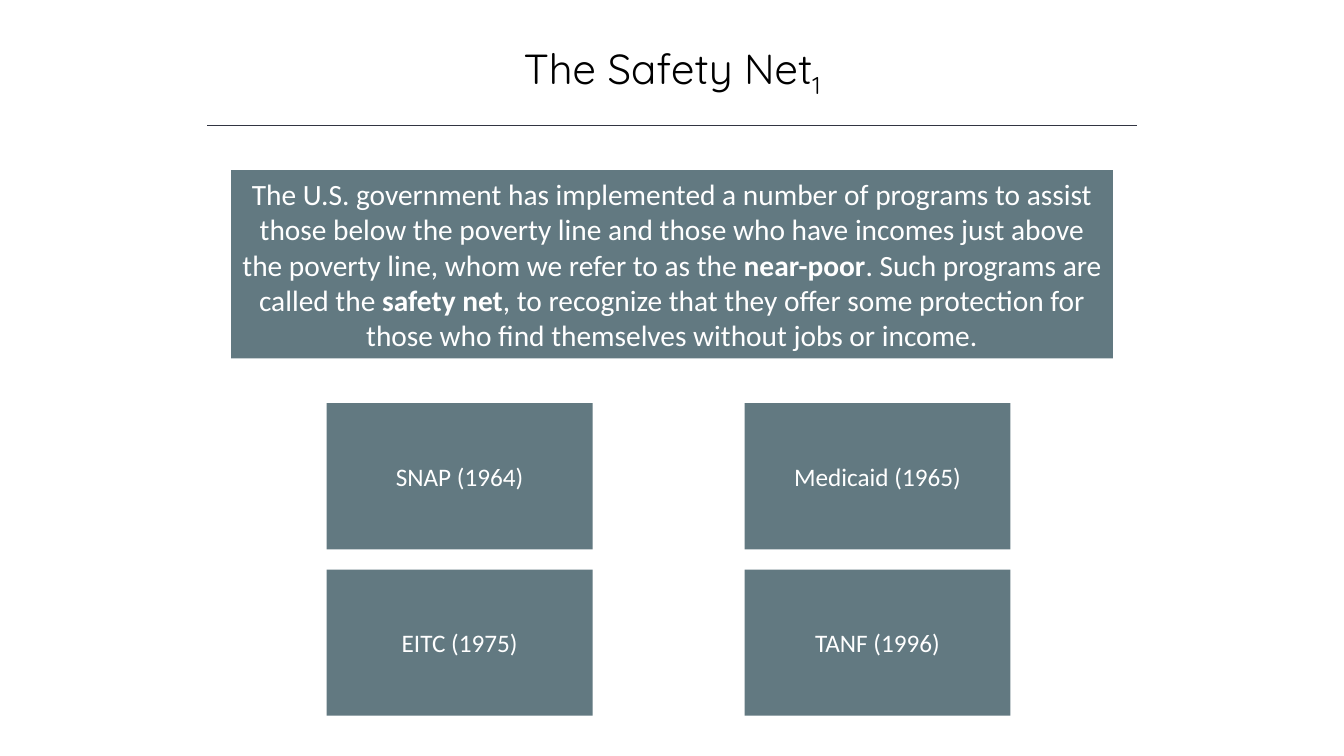
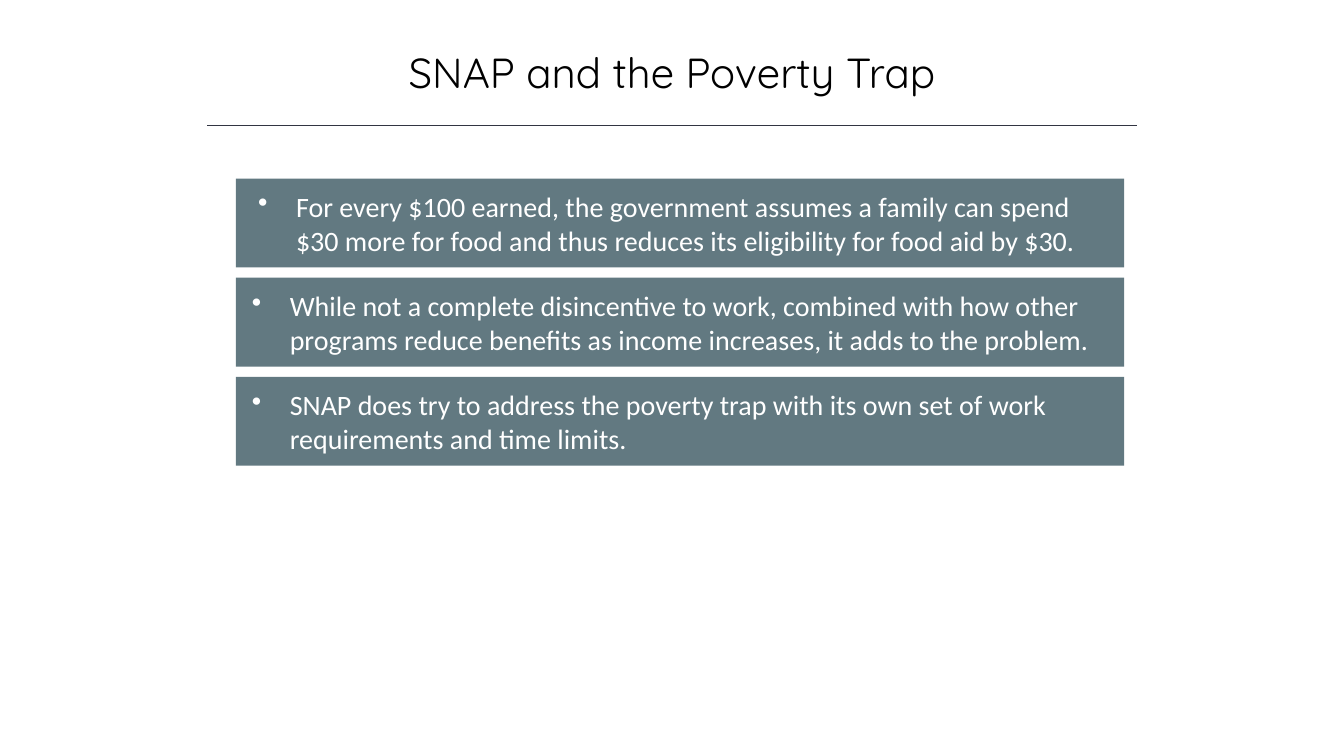
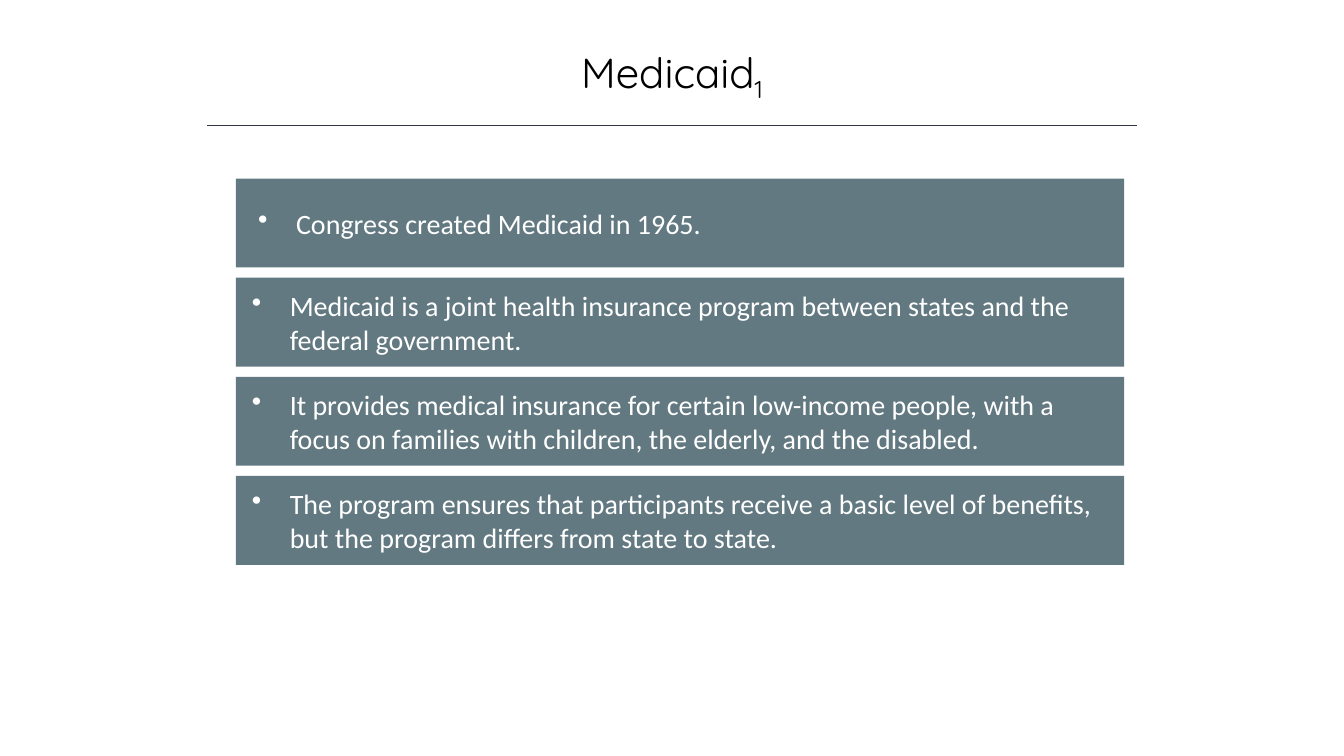
"""Build three slides on the safety net, SNAP and Medicaid."""
from pptx import Presentation
from pptx.dml.color import RGBColor
from pptx.enum.shapes import MSO_CONNECTOR, MSO_SHAPE
from pptx.enum.text import MSO_ANCHOR, MSO_AUTO_SIZE, PP_ALIGN
from pptx.oxml.ns import qn
from pptx.util import Pt
from lxml.etree import SubElement

SLATE, INK, RULE, WHITE = "627981", "000000", "323542", "FFFFFF"


def hue(code):
    return RGBColor.from_string(code)


def box(slide, left, top, width, height, text, size):
    shape = slide.shapes.add_shape(
        MSO_SHAPE.RECTANGLE, Pt(left), Pt(top), Pt(width), Pt(height))
    shape.shadow.inherit = False
    shape.fill.solid()
    shape.fill.fore_color.rgb = hue(SLATE)
    shape.line.fill.background()
    frame = shape.text_frame
    frame.word_wrap = True
    frame.vertical_anchor = MSO_ANCHOR.MIDDLE
    par = frame.paragraphs[0]
    par.alignment = PP_ALIGN.CENTER
    for spot, part in enumerate(text.split("*")):
        run = par.add_run()
        run.text = part
        run.font.name = "Calibri"
        run.font.size = Pt(size)
        run.font.bold = spot % 2 == 1
        run.font.color.rgb = hue(WHITE)
    return frame


deck = Presentation()
deck.slide_width, deck.slide_height = Pt(960), Pt(540)

heads = [("The Safety Net", "1", 26.6),
         ("SNAP and the Poverty Trap", "", 29.5),
         ("Medicaid", "1", 29.5)]
for name, mark, top in heads:
    slide = deck.slides.add_slide(deck.slide_layouts[5])
    title = slide.shapes.title
    title.left, title.top = Pt(120), Pt(top)
    title.width, title.height = Pt(720), Pt(44)
    frame = title.text_frame
    frame.text = name
    frame.word_wrap = True
    frame.auto_size = MSO_AUTO_SIZE.SHAPE_TO_FIT_TEXT
    frame.vertical_anchor = MSO_ANCHOR.TOP
    par = frame.paragraphs[0]
    par.alignment = PP_ALIGN.CENTER
    if mark:
        sub = par.add_run()
        sub.text = mark
        sub.font._element.set("baseline", "-25000")
    for run in par.runs:
        run.font.name = "Quicksand"
        run.font.size = Pt(30)
        run.font.color.rgb = hue(INK)
    line = slide.shapes.add_connector(
        MSO_CONNECTOR.STRAIGHT, Pt(148), Pt(89.5), Pt(812), Pt(89.5))
    line.line.color.rgb = hue(RULE)
    line.line.width = Pt(1)
    SubElement(line._element.spPr, qn("a:effectLst"))

net, snap, aid = deck.slides

box(net, 165, 121.5, 630, 134.5,
    "The U.S. government has implemented a number of programs to assist "
    "those below the poverty line and those who have incomes just above "
    "the poverty line, whom we refer to as the *near-poor*. Such programs "
    "are called the *safety net*, to recognize that they offer some "
    "protection for those who find themselves without jobs or income.", 21)
cards = ["SNAP (1964)", "Medicaid (1965)", "EITC (1975)", "TANF (1996)"]
for spot, text in enumerate(cards):
    row, col = divmod(spot, 2)
    box(net, 233.3 + 298.5 * col, 288 + 118.8 * row, 190, 104.4, text, 18)

lists = [
    (snap, [
        "For every $100 earned, the government assumes a family can spend "
        "$30 more for food and thus reduces its eligibility for food aid "
        "by $30.",
        "While not a complete disincentive to work, combined with how other "
        "programs reduce benefits as income increases, it adds to the "
        "problem.",
        "SNAP does try to address the poverty trap with its own set of work "
        "requirements and time limits."]),
    (aid, [
        "Congress created Medicaid in 1965.",
        "Medicaid is a joint health insurance program between states and "
        "the federal government.",
        "It provides medical insurance for certain low-income people, with "
        "a focus on families with children, the elderly, and the disabled.",
        "The program ensures that participants receive a basic level of "
        "benefits, but the program differs from state to state."])]
for slide, items in lists:
    for row, text in enumerate(items):
        frame = box(slide, 168.5, 127.6 + 70.8 * row, 634.5, 63.5, text, 20)
        frame.margin_left = Pt(11.5 if row else 16)
        frame.margin_right = Pt(22 if row else 17.5)
        par = frame.paragraphs[0]
        par.alignment = PP_ALIGN.LEFT
        props = par._p.get_or_add_pPr()
        props.set("marL", str(Pt(27)))
        props.set("indent", str(-Pt(27)))
        SubElement(props, qn("a:buChar")).set("char", "•")

deck.save("out.pptx")
